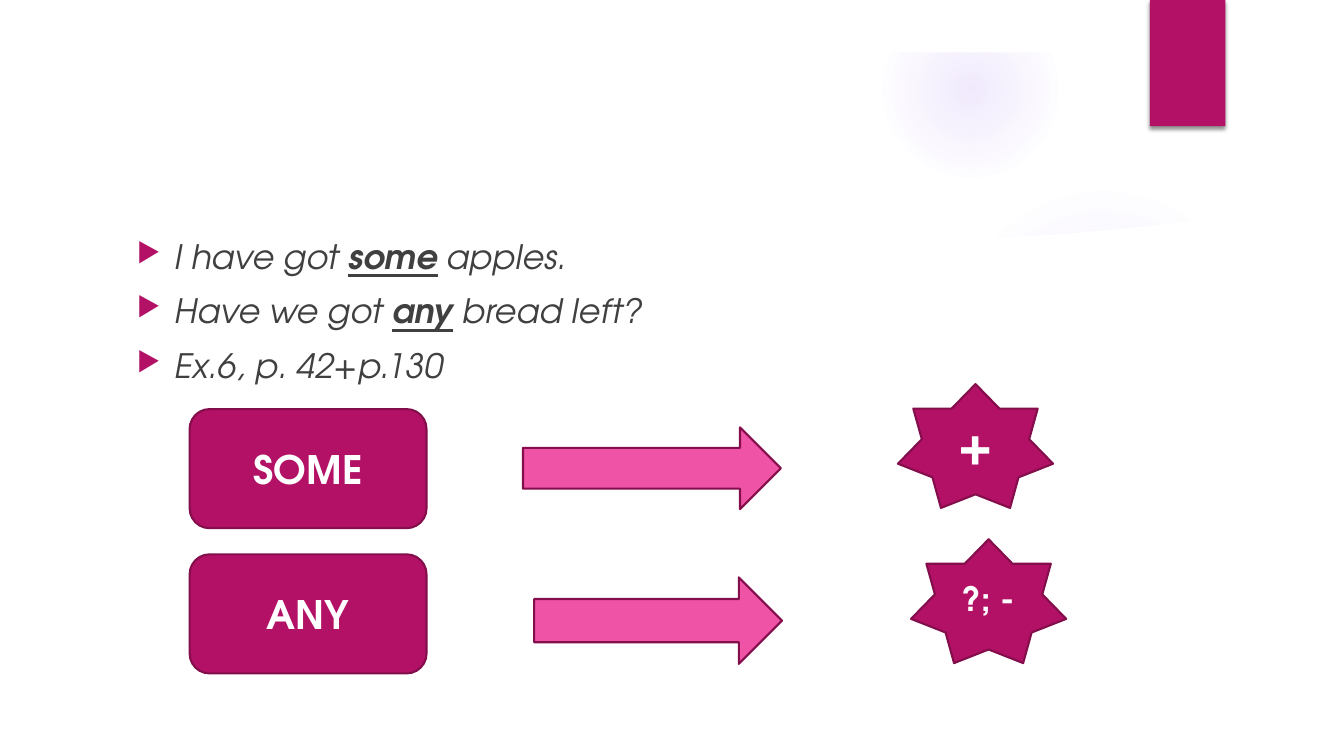
from dataclasses import dataclass

from lxml.etree import SubElement
from pptx import Presentation
from pptx.dml.color import RGBColor
from pptx.enum.shapes import MSO_SHAPE
from pptx.enum.text import MSO_ANCHOR, PP_ALIGN
from pptx.oxml import parse_xml
from pptx.oxml.ns import nsdecls, qn
from pptx.util import Cm, Pt


@dataclass(frozen=True)
class Theme:
    font: str = "TeX Gyre Adventor"
    white: str = "FFFFFF"
    text: str = "404040"
    accent: str = "B31166"
    outline: str = "840D4B"
    arrow: str = "EF53A5"
    glow: str = "9B6BF2"
    shadow: str = "000000"
    body_size: int = 24
    word_size: int = 28
    plus_size: int = 36


THEME = Theme()

# Each example: (text, emphasised) runs
EXAMPLES = [
    [("I have got ", False), ("some", True), (" apples.", False)],
    [("Have we got ", False), ("any", True), (" bread left?", False)],
    [("Ex.6, p. 42+p.130", False)],
]

# Each rule: word, its top, arrow box, sign, sign size, star position
RULES = [
    ("SOME", 10.31, (13.18, 10.77, 6.5, 2.06), "+", THEME.plus_size, (22.63, 9.68)),
    ("ANY", 13.97, (13.46, 14.55, 6.25, 2.18), "?; -", THEME.body_size, (22.96, 13.59)),
]
WORD_LEFT, WORD_SIZE = 4.78, (5.97, 3.0)
STAR_SIZE = (3.91, 3.12)

# Upper edge of the white page, in cm
PAGE_EDGE = [(1.27, 5.18), (6.32, 5.77), (12.0, 6.2), (17.32, 6.3), (21.4, 6.19),
             (24.1, 6.07), (26.92, 5.89), (29.06, 5.69), (30.48, 5.51), (32.6, 5.18)]


def paint(shape, color, outline=None):
    shape.shadow.inherit = False
    shape.fill.solid()
    shape.fill.fore_color.rgb = RGBColor.from_string(color)
    if outline:
        shape.line.color.rgb = RGBColor.from_string(outline)
        shape.line.width = Pt(1.5)
    else:
        shape.line.fill.background()


def style(font, size, color):
    font.name = THEME.font
    font.size = Pt(size)
    font.color.rgb = RGBColor.from_string(color)


def add_block(slide, preset, box, color, outline=None):
    block = slide.shapes.add_shape(preset, *map(Cm, box))
    paint(block, color, outline)
    return block


def add_label(block, label, size):
    frame = block.text_frame
    frame.vertical_anchor = MSO_ANCHOR.MIDDLE
    paragraph = frame.paragraphs[0]
    paragraph.text = label
    paragraph.alignment = PP_ALIGN.CENTER
    style(paragraph.font, size, THEME.white)
    paragraph.font.bold = True


def add_glow(slide, left, top, diameter, stops):
    glow = add_block(slide, MSO_SHAPE.OVAL, (left, top, diameter, diameter), THEME.glow)
    colors = "".join(
        f'<a:gs pos="{position * 1000}"><a:srgbClr val="{THEME.glow}">'
        f'<a:alpha val="{opacity * 1000}"/></a:srgbClr></a:gs>'
        for position, opacity in stops)
    gradient = parse_xml(
        f'<a:gradFill {nsdecls("a")}><a:gsLst>{colors}</a:gsLst><a:path path="circle">'
        '<a:fillToRect l="50000" t="50000" r="50000" b="50000"/></a:path></a:gradFill>')
    properties = glow.element.spPr
    properties.replace(properties.find(qn("a:solidFill")), gradient)


def add_page(slide):
    start, *edge = [(Cm(x), Cm(y)) for x, y in PAGE_EDGE]
    builder = slide.shapes.build_freeform(*start)
    builder.add_line_segments(edge + [(Cm(32.6), Cm(17.78)), (Cm(1.27), Cm(17.78))])
    paint(builder.convert_to_shape(), THEME.white)


def add_tab(slide):
    tab = add_block(slide, MSO_SHAPE.RECTANGLE, (28.98, 0, 1.9, 3.18), THEME.accent)
    effects = tab.element.spPr.find(qn("a:effectLst"))
    effects.append(parse_xml(
        f'<a:outerShdw {nsdecls("a")} blurRad="{Pt(3)}" dist="{Pt(2)}" dir="5400000">'
        f'<a:srgbClr val="{THEME.shadow}"><a:alpha val="45000"/></a:srgbClr></a:outerShdw>'))


def add_bullet(paragraph):
    properties = paragraph._p.get_or_add_pPr()
    properties.set("marL", str(Cm(0.95)))
    properties.set("indent", str(-Cm(0.95)))
    color = SubElement(properties, qn("a:buClr"))
    SubElement(color, qn("a:srgbClr")).set("val", THEME.accent)
    SubElement(properties, qn("a:buSzPct")).set("val", "80000")
    SubElement(properties, qn("a:buChar")).set("char", "▶")


def add_examples(slide):
    frame = slide.shapes.add_textbox(Cm(3.2), Cm(5.82), Cm(24.5), Cm(4.2)).text_frame
    frame.word_wrap = True
    for index, example in enumerate(EXAMPLES):
        paragraph = frame.add_paragraph() if index else frame.paragraphs[0]
        add_bullet(paragraph)
        if index:
            paragraph.space_before = Pt(10)
        style(paragraph.font, THEME.body_size, THEME.text)
        paragraph.font.italic = True
        for text, emphasised in example:
            run = paragraph.add_run()
            run.text = text
            if emphasised:
                run.font.bold = True
                run.font.underline = True


def add_rule(slide, word, top, arrow_box, sign, sign_size, star_position):
    word_block = add_block(slide, MSO_SHAPE.ROUNDED_RECTANGLE,
                           (WORD_LEFT, top, *WORD_SIZE), THEME.accent, THEME.outline)
    add_label(word_block, word, THEME.word_size)
    add_block(slide, MSO_SHAPE.RIGHT_ARROW, arrow_box, THEME.arrow, THEME.outline)
    star = add_block(slide, MSO_SHAPE.STAR_7_POINT,
                     (*star_position, *STAR_SIZE), THEME.accent, THEME.outline)
    add_label(star, sign, sign_size)


def main():
    deck = Presentation()
    deck.slide_width, deck.slide_height = Cm(33.87), Cm(19.05)
    slide = deck.slides.add_slide(deck.slide_layouts[6])

    # Background glows, cut off by the white page and top margin
    add_glow(slide, 23.9, 4.65, 7.82, [(0, 7), (36, 6), (69, 0)])
    add_glow(slide, 22.23, 0.03, 4.45, [(0, 14), (36, 7), (73, 0)])
    add_page(slide)
    add_block(slide, MSO_SHAPE.RECTANGLE, (0, 0, 33.87, 1.32), THEME.white)
    add_tab(slide)

    # Examples and the some/any rules
    add_examples(slide)
    for rule in RULES:
        add_rule(slide, *rule)

    deck.save("out.pptx")


if __name__ == "__main__":
    main()
